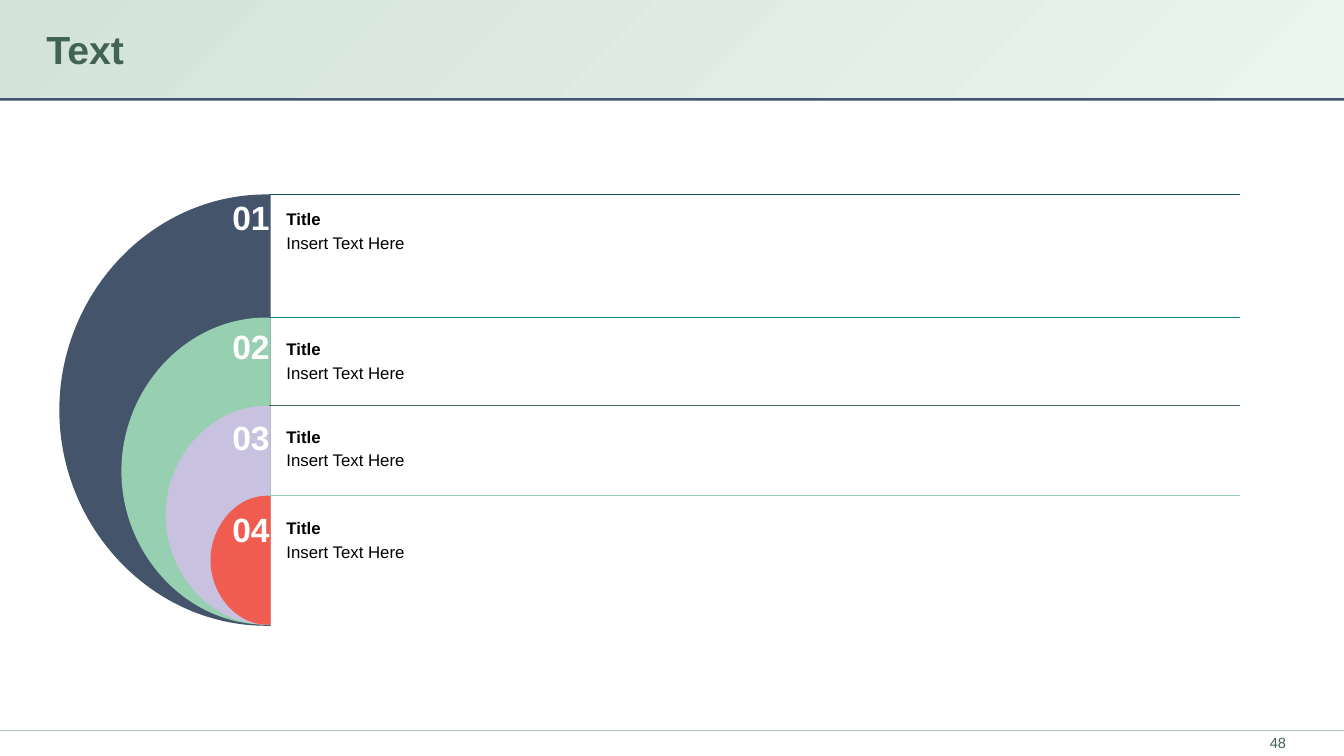
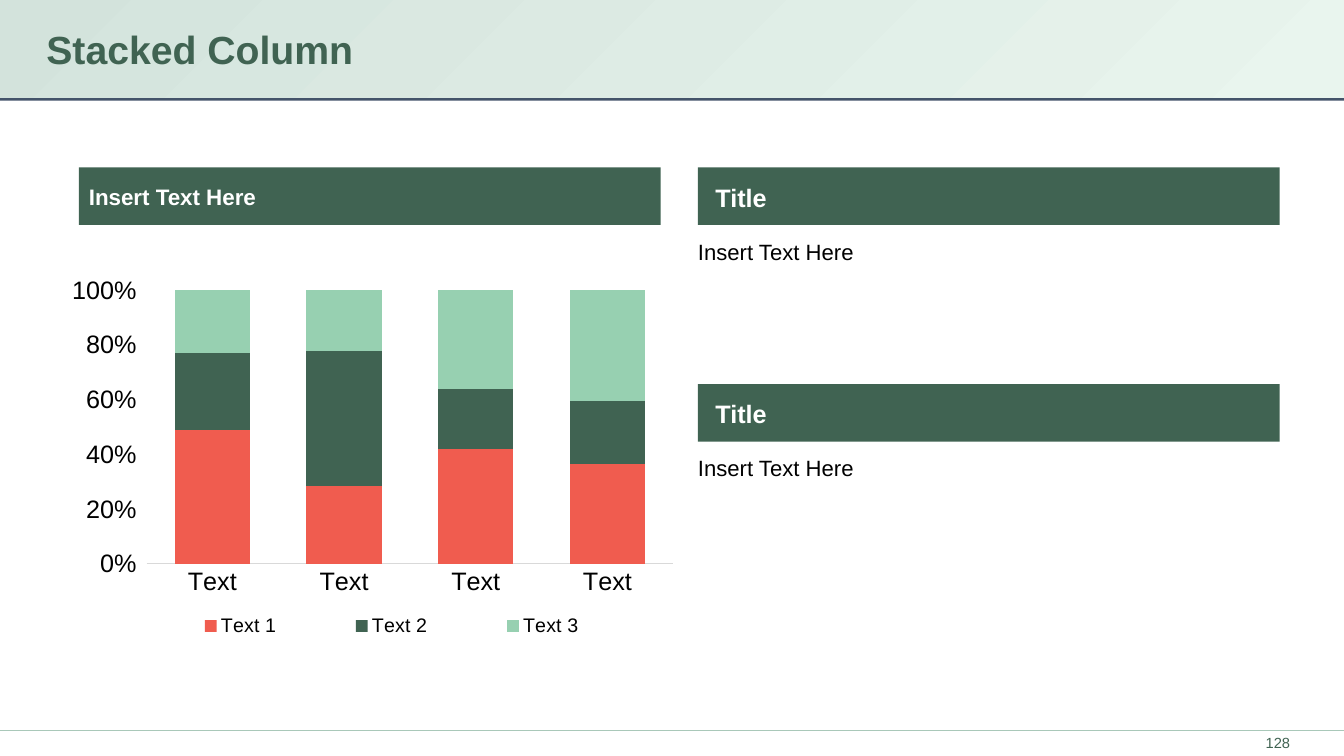
import math

import pptx
import pptx.chart.data
import pptx.dml.color
import pptx.enum.chart
import pptx.enum.shapes
import pptx.enum.text
import pptx.oxml
import pptx.oxml.ns
import pptx.util

Cm, Pt = pptx.util.Cm, pptx.util.Pt
RGB = pptx.dml.color.RGBColor.from_string
SHAPE = pptx.enum.shapes.MSO_SHAPE
ANCHOR = pptx.enum.text.MSO_ANCHOR
ALIGN = pptx.enum.text.PP_ALIGN
XL = pptx.enum.chart
qn, nsdecls = pptx.oxml.ns.qn, pptx.oxml.ns.nsdecls


class Theme:
    font = "Arial"
    green, navy, mint = "406352", "44546A", "97D0B1"
    lilac, coral = "C8C2E0", "F05C4F"
    band_from, band_to, footer_rule = "D3E3DC", "E9F5EE", "A9C8B9"
    axis, black, white = "D9D9D9", "000000", "FFFFFF"
    title, number, heading, label = 28, 24, 18, 16
    body, legend, small, page = 15.8, 14, 12, 10.5
    line = 0.75


# Number, disc colour, rule colour, then tops of disc, number and title, and disc bottom (cm)
STEPS = [
    ("01", Theme.navy, "195167", 4.9, 4.95, 5.26, 15.77),
    ("02", Theme.mint, "0B8A91", 8, 8.22, 8.53, 15.74),
    ("03", Theme.lilac, "406352", 10.23, 10.51, 10.74, 15.74),
    ("04", Theme.coral, "97D0B1", 12.49, 12.83, 13.04, 15.74),
]
STEP_TITLE, BODY = "Title", "Insert Text Here"
DISC_CENTRE, DISC_EDGE = 6.93, 6.82

CATEGORIES = ["Text"] * 4
SERIES = [
    ("Text 1", Theme.coral, (49, 28, 42, 37)),
    ("Text 2", Theme.green, (28, 49, 22, 23)),
    ("Text 3", Theme.mint, (23, 22, 36, 41)),
]
CHART_LABEL = "Insert Text Here"
# Heading, body, whether the heading has its own plate
PANELS = [("Title", "Insert Text Here", True), ("Title", "Insert Text Here", False)]
BAR_TOP, BAR_W, BAR_H, PANEL_STEP = 4.22, 14.66, 1.45, 5.46
PLOT = {"x": 0.124, "y": 0.188, "w": 0.851, "h": 0.613}
LEGEND = {"x": 0.1, "y": 0.9, "w": 0.84, "h": 0.08}


def style(font, size, color, bold=False):
    font.name, font.size, font.bold = Theme.font, Pt(size), bold
    font.color.rgb = RGB(color)


def write(shape, text, size, color, bold=False, align=ALIGN.LEFT,
          anchor=ANCHOR.MIDDLE, inset=(0, 0)):
    tf = shape.text_frame
    tf.word_wrap, tf.vertical_anchor = True, anchor
    tf.margin_left = tf.margin_right = Cm(inset[0])
    tf.margin_top = tf.margin_bottom = Cm(inset[1])
    p = tf.paragraphs[0]
    p.alignment = align
    r = p.add_run()
    r.text = text
    style(r.font, size, color, bold)


def add_text(s, box, *args, **kwargs):
    write(s.shapes.add_textbox(*map(Cm, box)), *args, **kwargs)


def paint(sp, color):
    sp.shadow.inherit = False
    sp.fill.solid()
    sp.fill.fore_color.rgb = RGB(color)
    sp.line.fill.background()


def add_rect(s, box, color):
    sp = s.shapes.add_shape(SHAPE.RECTANGLE, *map(Cm, box))
    paint(sp, color)
    return sp


def add_rule(s, left, right, y, color):
    cn = s.shapes.add_connector(pptx.enum.shapes.MSO_CONNECTOR.STRAIGHT,
                                Cm(left), Cm(y), Cm(right), Cm(y))
    cn.line.color.rgb = RGB(color)
    cn.line.width = Pt(Theme.line)
    cn.element.spPr.append(pptx.oxml.parse_xml("<a:effectLst %s/>" % nsdecls("a")))
    return cn


def add_clipped_disc(s, top, bottom, color):
    """Draw the part of a disc left of the common edge, as two Bézier arcs."""
    radius, middle = (bottom - top) / 2, (top + bottom) / 2
    start = math.acos((DISC_EDGE - DISC_CENTRE) / radius)
    pull = radius * 4 / 3 * math.tan((math.pi - start) / 4)
    left, rise = DISC_CENTRE - radius, radius * math.sin(start)
    out_x = DISC_EDGE - pull * math.sin(start)
    out_y = rise - pull * math.cos(start)
    arcs = [
        ((out_x, middle - out_y), (left, middle - pull), (left, middle)),
        ((left, middle + pull), (out_x, middle + out_y), (DISC_EDGE, middle + rise)),
    ]
    fb = s.shapes.build_freeform(Cm(DISC_EDGE), Cm(middle - rise))
    fb.add_line_segments([(Cm(x), Cm(y)) for x, y in (arcs[0][2], arcs[1][2])],
                         close=True)
    sp = fb.convert_to_shape()
    paint(sp, color)
    for segment, arc in zip(list(sp.element.iter(qn("a:lnTo"))), arcs):
        points = "".join('<a:pt x="%d" y="%d"/>' % (Cm(x) - sp.left, Cm(y) - sp.top)
                         for x, y in arc)
        segment.getparent().replace(segment, pptx.oxml.parse_xml(
            "<a:cubicBezTo %s>%s</a:cubicBezTo>" % (nsdecls("a"), points)))


def dress_layout(layout, s):
    """Draw the band and rules on s, then move them behind the layout's title."""
    for ph in list(layout.placeholders):
        if ph.placeholder_format.idx:
            ph.element.getparent().remove(ph.element)
    bar = add_rect(s, (0, 2.41, 33.87, 0.13), Theme.navy)
    band = add_rect(s, (0, 0, 33.87, 2.46), Theme.band_from)
    band.fill.gradient()
    band.fill.gradient_angle = 315
    for stop, color in zip(band.fill.gradient_stops, (Theme.band_from, Theme.band_to)):
        stop.color.rgb = RGB(color)
    rule = add_rule(s, 0, 33.87, 18.41, Theme.footer_rule)
    for i, sp in enumerate((bar, band, rule)):
        layout.shapes.element.insert(2 + i, sp.element)


def add_slide(prs, layout, title, page):
    s = prs.slides.add_slide(layout)
    ph = s.shapes.title
    ph.left, ph.top, ph.width, ph.height = map(Cm, (1.17, 0.22, 31.52, 2.03))
    write(ph, title, Theme.title, Theme.green, bold=True)
    add_text(s, (31.72, 18.43, 0.97, 0.58), page, Theme.page, Theme.green,
             align=ALIGN.CENTER)
    return s


def fill_steps(s):
    for number, color, rule, top, number_top, title_top, bottom in STEPS:
        add_clipped_disc(s, top, bottom, color)
        add_rule(s, 6.78, 31.25, top, rule)
        add_text(s, (5.83, number_top, 0.99, 1.02), number, Theme.number,
                 Theme.white, bold=True, align=ALIGN.CENTER)
        add_text(s, (7.22, title_top, 19.05, 0.51), STEP_TITLE, Theme.small,
                 Theme.black, bold=True, anchor=ANCHOR.BOTTOM)
        add_text(s, (7.22, title_top + 0.6, 19.05, 0.51), BODY, Theme.small,
                 Theme.black, anchor=ANCHOR.TOP)


def place_part(parent, position, box, target=""):
    """Give a chart part a fixed box, in shares of the chart's size."""
    for old in parent.findall(qn("c:layout")):
        parent.remove(old)
    modes = "".join('<c:%sMode val="edge"/>' % k for k in "xy")
    sizes = "".join('<c:%s val="%s"/>' % item for item in box.items())
    parent.insert(position, pptx.oxml.parse_xml(
        "<c:layout %s><c:manualLayout>%s%s%s</c:manualLayout></c:layout>"
        % (nsdecls("c"), target, modes, sizes)))


def add_stacked_chart(s, box):
    data = pptx.chart.data.CategoryChartData()
    data.categories = CATEGORIES
    for name, _, values in SERIES:
        data.add_series(name, values)
    chart = s.shapes.add_chart(XL.XL_CHART_TYPE.COLUMN_STACKED_100,
                               *map(Cm, box), data).chart
    chart.has_title = False
    style(chart.font, Theme.heading, Theme.black)

    plot = chart.plots[0]
    plot.gap_width, plot.overlap, plot.vary_by_categories = 75, 100, False
    for series, (_, color, _) in zip(plot.series, SERIES):
        series.format.fill.solid()
        series.format.fill.fore_color.rgb = RGB(color)

    cat, val = chart.category_axis, chart.value_axis
    cat.major_tick_mark = XL.XL_TICK_MARK.NONE
    cat.format.line.color.rgb = RGB(Theme.axis)
    cat.format.line.width = Pt(Theme.line)
    val.has_major_gridlines = False
    val.minimum_scale, val.maximum_scale, val.major_unit = 0, 1, 0.2
    val.format.line.fill.background()
    val.tick_labels.number_format = "0%"
    val.tick_labels.number_format_is_linked = False
    for axis in (cat, val):
        style(axis.tick_labels.font, Theme.heading, Theme.black)

    chart.has_legend = True
    legend = chart.legend
    legend.position = XL.XL_LEGEND_POSITION.BOTTOM
    legend.include_in_layout = False
    style(legend.font, Theme.legend, Theme.black)
    chart_xml = chart.element.chart
    place_part(chart_xml.plotArea, 0, PLOT, '<c:layoutTarget val="inner"/>')
    place_part(chart_xml.find(qn("c:legend")), 1, LEGEND)


def fill_chart_slide(s):
    add_stacked_chart(s, (1.76, 5.2, 15.6, 11.25))
    label = add_rect(s, (1.99, BAR_TOP, BAR_W, BAR_H), Theme.green)
    write(label, CHART_LABEL, Theme.label, Theme.white, bold=True, inset=(0.25, 0.25))
    for i, (heading, body, plate) in enumerate(PANELS):
        top = BAR_TOP + i * PANEL_STEP
        add_rect(s, (17.59, top, BAR_W, BAR_H), Theme.green)
        box = (17.73, top + 0.2, 4.45, 1.09)
        sp = add_rect(s, box, Theme.green) if plate else s.shapes.add_textbox(*map(Cm, box))
        write(sp, heading, Theme.heading, Theme.white, bold=True, inset=(0.3, 0.15))
        add_text(s, (17.59, top + 1.78, 4.34, 0.69), body, Theme.body,
                 Theme.black, anchor=ANCHOR.TOP)


def main():
    prs = pptx.Presentation()
    prs.slide_width, prs.slide_height = Cm(33.87), Cm(19.05)
    layout = prs.slide_layouts.get_by_name("Title Only")
    steps = add_slide(prs, layout, "Text", "48")
    dress_layout(layout, steps)
    fill_steps(steps)
    fill_chart_slide(add_slide(prs, layout, "Stacked Column", "128"))
    prs.save("out.pptx")


if __name__ == "__main__":
    main()
